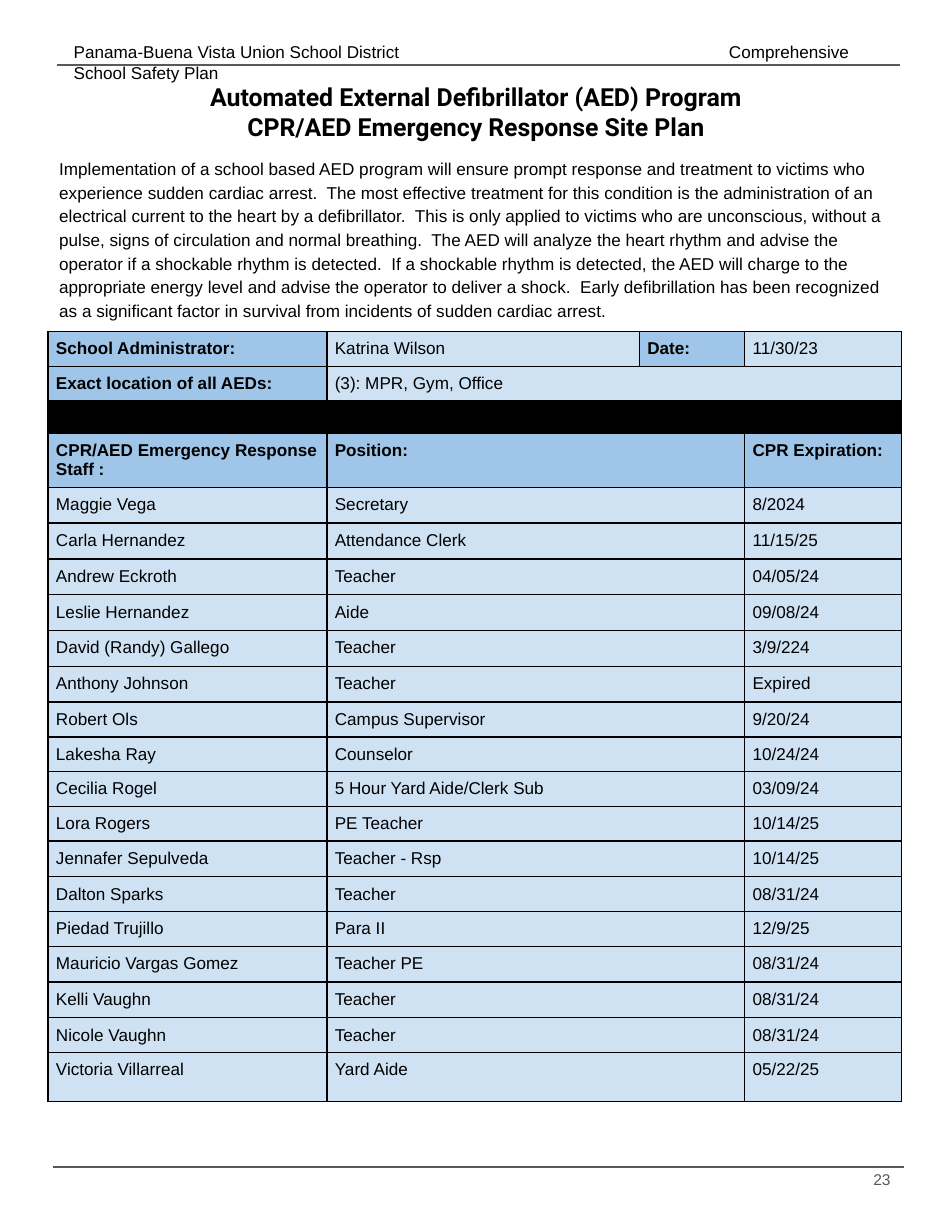
from lxml import etree
from pptx import Presentation
from pptx.dml.color import RGBColor
from pptx.enum.shapes import MSO_CONNECTOR
from pptx.enum.text import MSO_ANCHOR, MSO_AUTO_SIZE, PP_ALIGN
from pptx.oxml.ns import qn
from pptx.util import Inches, Pt

LEFT, CENTER, RIGHT = PP_ALIGN.LEFT, PP_ALIGN.CENTER, PP_ALIGN.RIGHT
TOP = MSO_ANCHOR.TOP
NO_FIT = MSO_AUTO_SIZE.NONE
STRAIGHT = MSO_CONNECTOR.STRAIGHT

COLORS = {"ink": "000000", "rule": "595959", "label": "9FC5E8", "value": "CFE2F3"}

# Content
HEADER = "Panama-Buena Vista Union School District\tComprehensive School Safety Plan"
TITLE = [
    "Automated External Defibrillator (AED) Program",
    "CPR/AED Emergency Response Site Plan",
]
INTRO = (
    "Implementation of a school based AED program will ensure prompt response and "
    "treatment to victims who experience sudden cardiac arrest.  The most effective "
    "treatment for this condition is the administration of an electrical current to "
    "the heart by a defibrillator.  This is only applied to victims who are "
    "unconscious, without a pulse, signs of circulation and normal breathing.  The "
    "AED will analyze the heart rhythm and advise the operator if a shockable rhythm "
    "is detected.  If a shockable rhythm is detected, the AED will charge to the "
    "appropriate energy level and advise the operator to deliver a shock.  Early "
    "defibrillation has been recognized as a significant factor in survival from "
    "incidents of sudden cardiac arrest."
)
PAGE_NUMBER = "23"
STAFF_LABELS = ("CPR/AED Emergency Response Staff :", "Position:", "CPR Expiration:")
# Name, position, CPR expiration, row height
STAFF = [
    ("Maggie Vega", "Secretary", "8/2024", 0.32),
    ("Carla Hernandez", "Attendance Clerk", "11/15/25", 0.32),
    ("Andrew Eckroth", "Teacher", "04/05/24", 0.32),
    ("Leslie Hernandez", "Aide", "09/08/24", 0.32),
    ("David (Randy) Gallego", "Teacher", "3/9/224", 0.32),
    ("Anthony Johnson", "Teacher", "Expired", 0.32),
    ("Robert Ols", "Campus Supervisor", "9/20/24", 0.31),
    ("Lakesha Ray", "Counselor", "10/24/24", 0.31),
    ("Cecilia Rogel", "5 Hour Yard Aide/Clerk Sub", "03/09/24", 0.31),
    ("Lora Rogers", "PE Teacher", "10/14/25", 0.31),
    ("Jennafer Sepulveda", "Teacher - Rsp", "10/14/25", 0.32),
    ("Dalton Sparks", "Teacher", "08/31/24", 0.31),
    ("Piedad Trujillo", "Para II", "12/9/25", 0.31),
    ("Mauricio Vargas Gomez", "Teacher PE", "08/31/24", 0.32),
    ("Kelli Vaughn", "Teacher", "08/31/24", 0.32),
    ("Nicole Vaughn", "Teacher", "08/31/24", 0.31),
    ("Victoria Villarreal", "Yard Aide", "05/22/25", 0.44),
]

# Table rows: height, then (text, columns spanned, style) for each cell
ROWS = [
    (0.31, [("School Administrator:", 1, "label"), ("Katrina Wilson", 1, "value"),
            ("Date:", 1, "label"), ("11/30/23", 1, "value")]),
    (0.31, [("Exact location of all AEDs:", 1, "label"),
            ("(3): MPR, Gym, Office", 3, "value")]),
    (0.28, [("", 4, "ink")]),
    (0.47, [(text, span, "label") for text, span in zip(STAFF_LABELS, (1, 2, 1))]),
]
for name, position, expiration, height in STAFF:
    ROWS.append((height, [(name, 1, "value"), (position, 2, "value"),
                          (expiration, 1, "value")]))
COLUMN_WIDTHS = [2.49, 2.79, 0.94, 1.4]


def rgb(key):
    return RGBColor.from_string(COLORS[key])


def write(frame, lines, size, color="ink", font="Arial", bold=False, align=LEFT):
    frame.text = "\n".join(lines)
    for paragraph in frame.paragraphs:
        paragraph.alignment = align
        for run in paragraph.runs:
            run.font.color.rgb = rgb(color)
            values = {"name": font, "size": Pt(size), "bold": bold}
            for key, value in values.items():
                setattr(run.font, key, value)


def set_frame(frame):
    values = {"word_wrap": True, "auto_size": NO_FIT, "vertical_anchor": TOP}
    for side in ("left", "right", "top", "bottom"):
        values[f"margin_{side}"] = Inches(0.1)
    for key, value in values.items():
        setattr(frame, key, value)


def add_text(slide, box, text, size, **style):
    frame = slide.shapes.add_textbox(*map(Inches, box)).text_frame
    set_frame(frame)
    write(frame, [text], size, **style)
    return frame.paragraphs[0]


def add_rule(slide, left, right, y):
    rule = slide.shapes.add_connector(STRAIGHT, *map(Inches, (left, y, right, y)))
    rule.line.color.rgb = rgb("rule")
    rule.line.width = Pt(0.75)
    etree.SubElement(rule._element.spPr, qn("a:effectLst"))


def format_cell(cell, text, style):
    for side in ("left", "right", "top", "bottom"):
        setattr(cell, f"margin_{side}", Inches(0.07))
    write(cell.text_frame, [text], 11, bold=style == "label")
    if not text:
        end = etree.SubElement(cell.text_frame.paragraphs[0]._p, qn("a:endParaRPr"))
        end.set("sz", "900")
    # Borders come before the fill in the cell properties
    properties = cell._tc.get_or_add_tcPr()
    for edge in ("a:lnL", "a:lnR", "a:lnT", "a:lnB"):
        border = etree.SubElement(properties, qn(edge), w=str(Pt(1)))
        solid = etree.SubElement(border, qn("a:solidFill"))
        etree.SubElement(solid, qn("a:srgbClr"), val=COLORS["ink"])
    cell.fill.solid()
    cell.fill.fore_color.rgb = rgb(style)


def add_site_table(slide, left, top):
    total = sum(height for height, _ in ROWS)
    table = slide.shapes.add_table(
        len(ROWS), len(COLUMN_WIDTHS), Inches(left), Inches(top),
        Inches(sum(COLUMN_WIDTHS)), Inches(total)).table
    table.first_row = table.horz_banding = False
    for column, width in zip(table.columns, COLUMN_WIDTHS):
        column.width = Inches(width)
    for r, (height, cells) in enumerate(ROWS):
        table.rows[r].height = Inches(height)
        c = 0
        for text, span, style in cells:
            if span > 1:
                table.cell(r, c).merge(table.cell(r, c + span - 1))
            for offset in range(span):
                format_cell(table.cell(r, c + offset), "" if offset else text, style)
            c += span


def main():
    prs = Presentation()
    prs.slide_width, prs.slide_height = Inches(8.5), Inches(11)
    slide = prs.slides.add_slide(prs.slide_layouts[5])

    # Running header and page rules
    header = add_text(slide, (0.56, 0.27, 7.54, 0.39), HEADER, 11)
    tabs = etree.SubElement(header._p.get_or_add_pPr(), qn("a:tabLst"))
    etree.SubElement(tabs, qn("a:tab"), pos=str(Inches(5.85)), algn="l")
    add_rule(slide, 0.51, 8.04, 0.58)
    add_rule(slide, 0.47, 8.07, 10.42)

    # Title
    title = slide.shapes.title
    title.left, title.top, title.width, title.height = map(
        Inches, (0.29, 0.63, 7.92, 0.66))
    set_frame(title.text_frame)
    write(title.text_frame, TITLE, 16, font="Roboto", bold=True, align=CENTER)

    # Introduction, site table and page number
    intro = add_text(slide, (0.43, 1.29, 7.62, 1.66), INTRO, 11)
    intro.line_spacing = 1.15
    intro.space_after = Pt(16)
    add_site_table(slide, 0.43, 2.96)
    add_text(slide, (7.54, 10.35, 0.51, 0.46), PAGE_NUMBER, 10,
             color="rule", align=RIGHT)

    prs.save("out.pptx")


if __name__ == "__main__":
    main()
